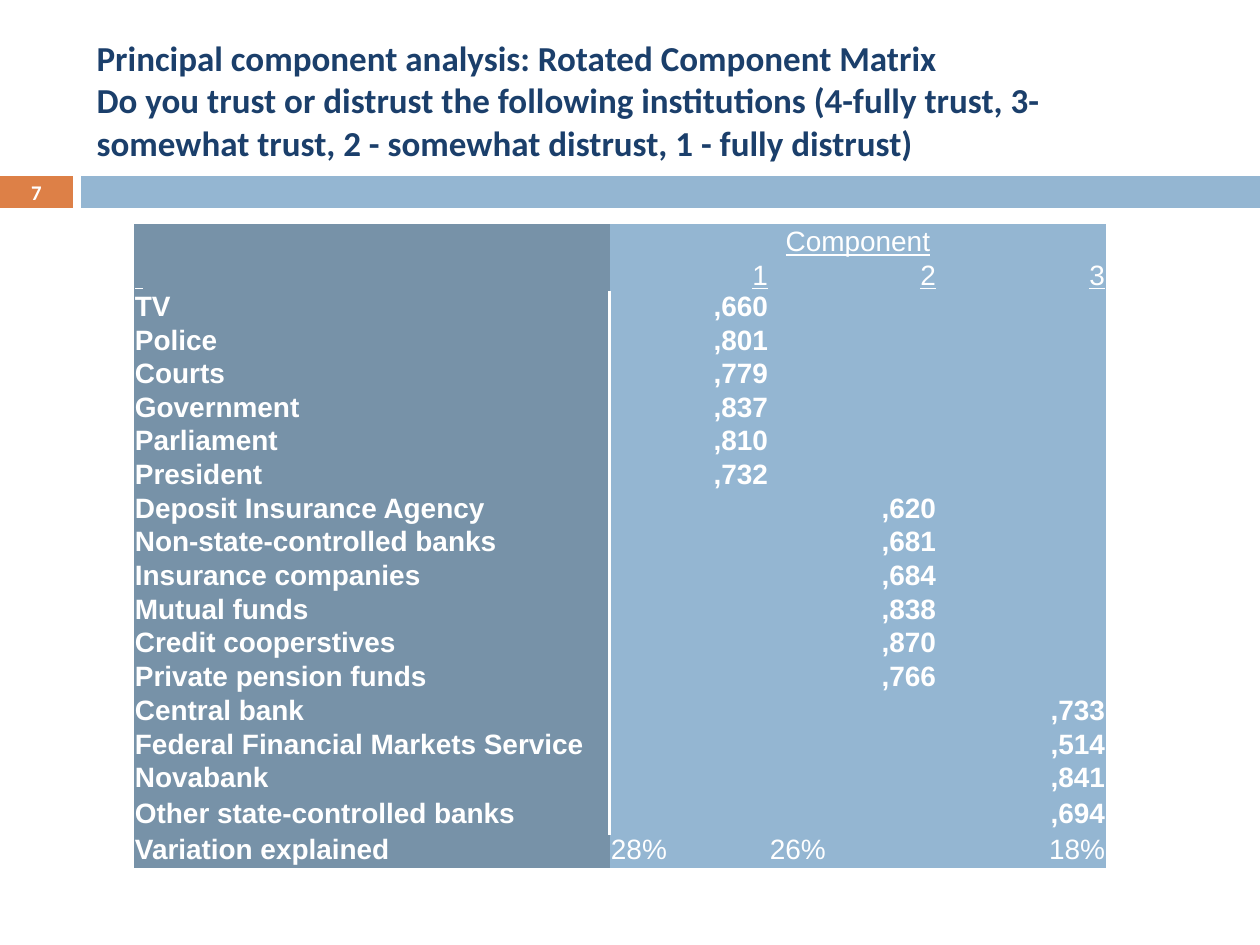
from dataclasses import dataclass

from lxml.etree import SubElement
from pptx import Presentation
from pptx.dml.color import RGBColor as RGB
from pptx.enum.shapes import MSO_SHAPE as SHAPE
from pptx.enum.text import MSO_ANCHOR as ANCHOR, MSO_AUTO_SIZE as AUTO, PP_ALIGN as ALIGN
from pptx.oxml import parse_xml
from pptx.oxml.ns import nsdecls, qn
from pptx.util import Emu, Pt

PX = 914400 // 126


@dataclass(frozen=True)
class Theme:
    title: str = "1B3F6B"
    accent: str = "DD8047"
    band: str = "94B6D2"
    label: str = "7792A8"
    light: str = "FFFFFF"
    title_font: str = "Calibri"
    table_font: str = "Arial"
    title_size: float = 20
    table_size: float = 16
    number_size: float = 11.9


T = Theme()
NO_STYLE = "{2D5ABB26-0587-4C30-8999-92F81FD0307C}"
TITLE = ("Principal component analysis: Rotated Component Matrix\n"
         "Do you trust or distrust the following institutions "
         "(4-fully trust, 3- somewhat trust, 2 - somewhat distrust, 1 - fully distrust)")
COLS = [476, 159, 168, 169]
ROWS = [33, 32] * 7 + [34, 34, 36, 36, 32]
LOADINGS = [
    [("TV", ",660"), ("Police", ",801"), ("Courts", ",779"),
     ("Government", ",837"), ("Parliament", ",810"), ("President", ",732")],
    [("Deposit Insurance Agency", ",620"), ("Non-state-controlled banks", ",681"),
     ("Insurance companies", ",684"), ("Mutual funds", ",838"),
     ("Credit cooperstives", ",870"), ("Private pension funds", ",766")],
    [("Central bank", ",733"), ("Federal Financial Markets Service", ",514"),
     ("Novabank", ",841"), ("Other state-controlled banks", ",694")],
]
VARIATION = ["Variation explained", "28%", "26%", "18%"]


def px(*values):
    return [Emu(v * PX) for v in values]


def write(tf, text, size, font, color, bold=False, underline=False,
          align=ALIGN.LEFT, anchor=ANCHOR.TOP):
    tf.word_wrap = True
    tf.vertical_anchor = anchor
    p = tf.paragraphs[0]
    p.alignment = align
    for i, line in enumerate(text.split("\n")):
        if i:
            p.add_line_break()
            SubElement(p._p[-1], qn("a:rPr"), sz=str(int(size * 100)))
        r = p.add_run()
        r.text = line
        r.font.size = Pt(size)
        r.font.name = font
        r.font.bold = bold
        r.font.underline = underline
        r.font.color.rgb = RGB.from_string(color)


def add_title(s, x, y, w, h):
    sp = s.shapes.title
    sp.left, sp.top, sp.width, sp.height = px(x, y, w, h)
    sp.text_frame.auto_size = AUTO.NONE
    write(sp.text_frame, TITLE, T.title_size, T.title_font, T.title,
          bold=True, anchor=ANCHOR.MIDDLE)


def add_bar(s, x, y, w, h, color):
    sp = s.shapes.add_shape(SHAPE.RECTANGLE, *px(x, y, w, h))
    sp.shadow.inherit = False
    sp.fill.solid()
    sp.fill.fore_color.rgb = RGB.from_string(color)
    sp.line.fill.background()


def add_number_band(s, x, y, w, h):
    number_w, gap = 73, 8
    add_bar(s, x, y, number_w, h, T.accent)
    add_bar(s, x + number_w + gap, y, w - number_w - gap, h, T.band)
    tf = s.shapes.add_textbox(*px(x, y, number_w, h)).text_frame
    tf.margin_left = tf.margin_right = tf.margin_top = tf.margin_bottom = 0
    write(tf, "7", T.number_size, T.title_font, T.light, bold=True,
          align=ALIGN.CENTER, anchor=ANCHOR.MIDDLE)


def format_cell(cell, color, divider):
    cell.margin_left = cell.margin_right = Emu(PX)
    cell.margin_top = cell.margin_bottom = 0
    cell.fill.solid()
    cell.fill.fore_color.rgb = RGB.from_string(color)
    if divider:
        cell._tc.get_or_add_tcPr().insert(0, parse_xml(
            f'<a:lnR {nsdecls("a")} w="25400"><a:solidFill>'
            f'<a:srgbClr val="{T.light}"/></a:solidFill></a:lnR>'))


def fill_cell(cell, text, **fmt):
    anchor = fmt.get("anchor", ANCHOR.TOP)
    cell.vertical_anchor = anchor
    if text:
        write(cell.text_frame, text, T.table_size, T.table_font, T.light, **fmt)
    else:
        SubElement(cell.text_frame.paragraphs[0]._p, qn("a:endParaRPr"),
                   sz=str(T.table_size * 100))


def add_matrix(s, x, y):
    frame = s.shapes.add_table(len(ROWS), len(COLS), *px(x, y, sum(COLS), sum(ROWS)))
    table = frame.table
    table.first_row = table.horz_banding = False
    table._tbl.tblPr.find(qn("a:tableStyleId")).text = NO_STYLE
    for col, w in zip(table.columns, COLS):
        col.width = Emu(w * PX)
    for row, h in zip(table.rows, ROWS):
        row.height = Emu(h * PX)

    body = [[name] + [value if c == k else "" for c in range(3)]
            for k, group in enumerate(LOADINGS) for name, value in group]
    grid = [[" ", "Component", "", ""], ["", "1", "2", "3"]] + body + [VARIATION]
    last = len(grid) - 1
    for i, texts in enumerate(grid):
        for j, text in enumerate(texts):
            cell = table.cell(i, j)
            head = i < 2
            align = ALIGN.RIGHT
            if j == 0 or (i == last and j < 3):
                align = ALIGN.LEFT
            elif i == 0:
                align = ALIGN.CENTER
            format_cell(cell, T.band if j else T.label, j == 0 and 2 <= i < last)
            fill_cell(cell, text, align=align, underline=head,
                      bold=not head and (j == 0 or i < last),
                      anchor=ANCHOR.BOTTOM if head else ANCHOR.TOP)
    table.cell(0, 0).merge(table.cell(1, 0))
    table.cell(0, 1).merge(table.cell(0, 3))


def main():
    prs = Presentation()
    prs.slide_width, prs.slide_height = px(1260, 945)
    s = prs.slides.add_slide(prs.slide_layouts[5])
    add_title(s, 84, 32, 1124, 136)
    add_number_band(s, 0, 176, 1260, 32)
    add_matrix(s, 134, 224)
    prs.save("out.pptx")


if __name__ == "__main__":
    main()
